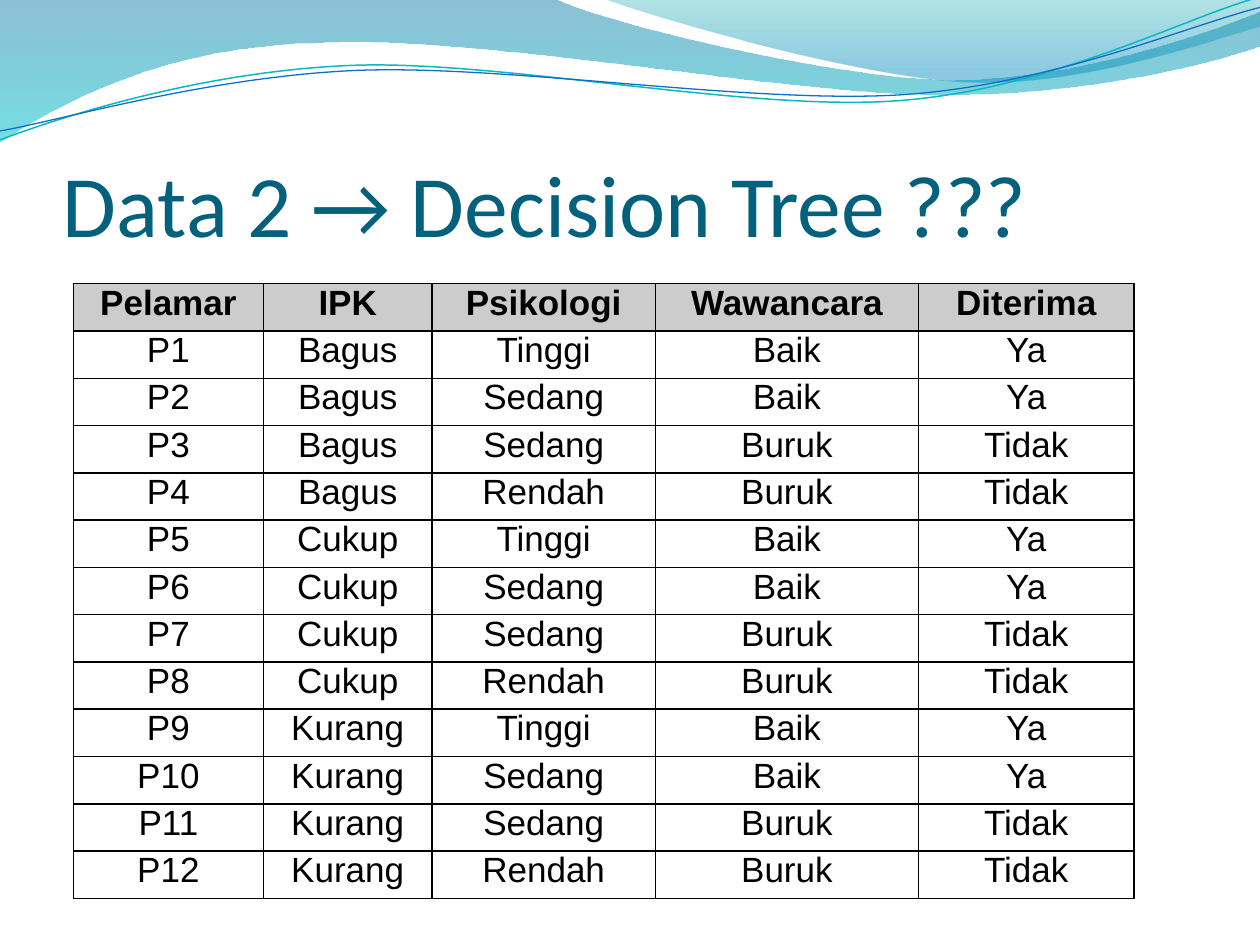
from itertools import product
from math import cos, radians, sin

from lxml import etree
from pptx import Presentation
from pptx import util as u
from pptx.dml.color import RGBColor
from pptx.enum import text
from pptx.oxml import ns

BLACK = RGBColor(0x00, 0x00, 0x00)
HEADER_GREY = RGBColor(0xCC, 0xCC, 0xCC)
TITLE_TEAL = RGBColor(0x04, 0x61, 0x7B)
DEEP_BLUE = RGBColor(0x00, 0x74, 0xA1)
BRIGHT_CYAN = RGBColor(0x00, 0xC6, 0xCF)
SEA_GREEN = RGBColor(0x00, 0xA1, 0xA9)
SKY_BLUE = RGBColor(0x00, 0x8B, 0xBF)
LINE_CYAN = RGBColor(0x0A, 0xB8, 0xBF)
LINE_BLUE = RGBColor(0x0F, 0x6F, 0xC6)

STRAND_TILT = 2.7

WIDE_WAVE = [
    [(0, -0.03)],
    [(11.18, -0.03)],
    [(12.09, 0.43), (16.87, 1.6), (19.25, 1.6)],
    [(21.67, 1.6), (24.33, 0.66), (25.4, 0.23)],
    [(25.43, 0.91)],
    [(24.97, 1.12), (22.1, 1.93), (18.95, 1.91)],
    [(15.8, 1.91), (9.7, 0.71), (6.53, 0.86)],
    [(3.28, 0.89), (1.17, 2.11), (-0.03, 2.87)],
    [(0, -0.03)],
]
RIGHT_WAVE = [
    [(12.17, -0.03)],
    [(12.93, 0.28), (17.32, 1.57), (19.53, 1.65)],
    [(21.74, 1.75), (24.41, 0.81), (25.4, 0.53)],
    [(25.4, 0)],
    [(12.17, -0.03)],
]
CYAN_STRAND = [
    [(0, 2.82)],
    [(1.22, 2.36), (4.01, 1.45), (7.04, 1.32)],
    [(10.03, 1.19), (15.06, 2.26), (18.11, 2.03)],
    [(21.16, 1.8), (23.83, 0.38), (25.35, -0.05)],
]
BLUE_STRAND = [
    [(0, 2.64)],
    [(1.19, 2.44), (4.17, 1.55), (7.19, 1.42)],
    [(10.24, 1.3), (15.16, 2.11), (18.21, 1.91)],
    [(21.23, 1.7), (23.9, 0.53), (25.4, 0.15)],
]

HEADERS = ["Pelamar", "IPK", "Psikologi", "Wawancara", "Diterima"]
COLUMN_WIDTHS = [3.83, 3.4, 4.5, 5.31, 4.34]
GRADES = ["Bagus", "Cukup", "Kurang"]
TESTS = [("Tinggi", "Baik"), ("Sedang", "Baik"), ("Sedang", "Buruk"), ("Rendah", "Buruk")]
ACCEPTED = {"Baik": "Ya", "Buruk": "Tidak"}


def write_text(frame, content, size, font, color, bold=False, align=text.PP_ALIGN.LEFT):
    paragraph = frame.paragraphs[0]
    paragraph.alignment = align
    run = paragraph.add_run()
    run.text = content
    run.font.size = u.Pt(size)
    run.font.name = font
    run.font.bold = bold
    run.font.color.rgb = color


def rotate(point, center, degrees):
    angle = radians(degrees)
    x, y = point[0] - center[0], point[1] - center[1]
    return (
        center[0] + x * cos(angle) - y * sin(angle),
        center[1] + x * sin(angle) + y * cos(angle),
    )


class SlideBuilder:
    heading_font = "Calibri"
    table_font = "Arial"

    def __init__(self, slide):
        self.slide = slide

    def outline(self, segments, closed):
        start, *rest = [(u.Cm(x), u.Cm(y)) for segment in segments for x, y in segment]
        builder = self.slide.shapes.build_freeform(*start)
        builder.add_line_segments(rest, close=closed)
        shape = builder.convert_to_shape()
        shape.shadow.inherit = False
        steps = iter(list(shape._element.spPr.iter(ns.qn("a:lnTo"))))
        for segment in segments[1:]:
            first, *others = [next(steps) for _ in segment]
            if others:
                first.tag = ns.qn("a:cubicBezTo")
            for step in others:
                first.append(step[0])
                step.getparent().remove(step)
        return shape

    def wave(self, segments, stops):
        shape = self.outline(segments, closed=True)
        shape.line.fill.background()
        shape.fill.gradient()
        shape.fill.gradient_angle = 270
        for stop, (position, color, _) in zip(shape.fill.gradient_stops, stops):
            stop.position = position
            stop.color.rgb = color
        colors = shape._element.spPr.iter(ns.qn("a:srgbClr"))
        for color, (_, _, opacity) in zip(colors, stops):
            etree.SubElement(color, ns.qn("a:alpha"), val=str(opacity * 1000))

    def strand(self, segments, center, color, width):
        level = [[rotate(point, center, STRAND_TILT) for point in segment] for segment in segments]
        shape = self.outline(level, closed=False)
        shape.rotation = 360 - STRAND_TILT
        shape.fill.background()
        shape.line.color.rgb = color
        shape.line.width = u.Pt(width)

    def title(self, content):
        box = self.slide.shapes.add_textbox(u.Cm(1.27), u.Cm(1.96), u.Cm(22.86), u.Cm(3.18))
        frame = box.text_frame
        frame.word_wrap = True
        frame.vertical_anchor = text.MSO_ANCHOR.BOTTOM
        frame.margin_left = frame.margin_right = frame.margin_bottom = 0
        write_text(frame, content, size=50, font=self.heading_font, color=TITLE_TEAL)

    def borders(self, cell):
        properties = cell._tc.get_or_add_tcPr()
        for side in ("a:lnL", "a:lnR", "a:lnT", "a:lnB"):
            line = etree.SubElement(properties, ns.qn(side), w=str(u.Pt(1)))
            fill = etree.SubElement(line, ns.qn("a:solidFill"))
            etree.SubElement(fill, ns.qn("a:srgbClr"), val=str(BLACK))

    def table(self, rows, widths):
        height = u.Cm(12.39)
        frame = self.slide.shapes.add_table(
            len(rows), len(widths), u.Cm(1.48), u.Cm(5.72), u.Cm(sum(widths)), height
        )
        table = frame.table
        table.horz_banding = False
        for column, width in zip(table.columns, widths):
            column.width = u.Cm(width)
        for row_index, row in enumerate(rows):
            header = row_index == 0
            table.rows[row_index].height = height // len(rows)
            for column_index, content in enumerate(row):
                cell = table.cell(row_index, column_index)
                cell.margin_left = cell.margin_right = u.Cm(0.18)
                cell.margin_top = cell.margin_bottom = 0
                self.borders(cell)
                if header:
                    cell.fill.solid()
                    cell.fill.fore_color.rgb = HEADER_GREY
                else:
                    cell.fill.background()
                write_text(cell.text_frame, content, size=20, font=self.table_font,
                           color=BLACK, bold=header, align=text.PP_ALIGN.CENTER)


def main():
    presentation = Presentation()
    presentation.slide_width = u.Cm(25.4)
    presentation.slide_height = u.Cm(19.05)
    builder = SlideBuilder(presentation.slides.add_slide(presentation.slide_layouts[6]))

    builder.wave(WIDE_WAVE, [(0, DEEP_BLUE, 45), (1, BRIGHT_CYAN, 55)])
    builder.wave(RIGHT_WAVE, [(0, SEA_GREEN, 30), (0.8, SKY_BLUE, 45)])
    builder.strand(CYAN_STRAND, (12.67, 1.46), LINE_CYAN, 0.85)
    builder.strand(BLUE_STRAND, (12.69, 1.5), LINE_BLUE, 0.75)
    builder.title("Data 2 → Decision Tree ???")

    applicants = [
        [f"P{number}", grade, psychology, interview, ACCEPTED[interview]]
        for number, (grade, (psychology, interview)) in enumerate(product(GRADES, TESTS), 1)
    ]
    builder.table([HEADERS, *applicants], COLUMN_WIDTHS)
    presentation.save("out.pptx")


if __name__ == "__main__":
    main()
